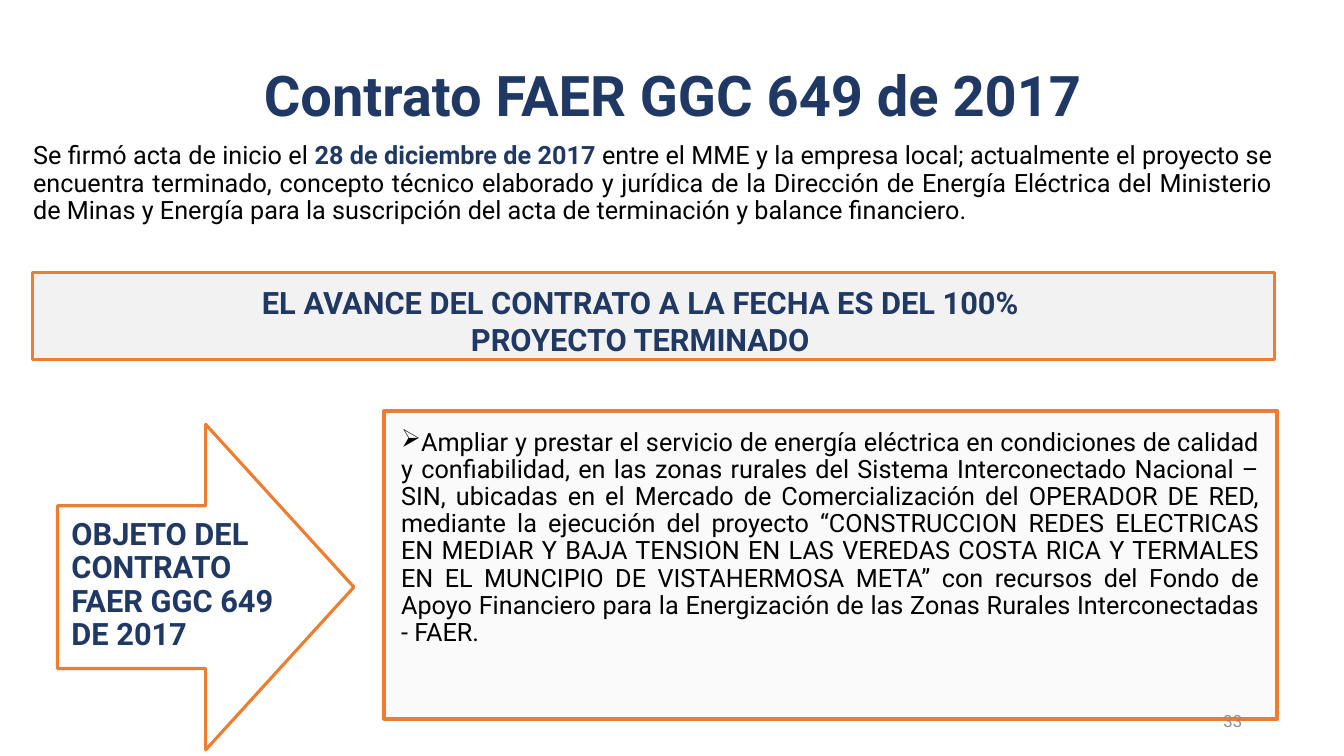
from lxml.etree import SubElement as Sub
from pptx import Presentation
from pptx.dml.color import RGBColor as Rgb
from pptx.enum.shapes import MSO_SHAPE as Geo
from pptx.enum.text import MSO_ANCHOR as Anchor, PP_ALIGN as Align
from pptx.oxml.ns import qn
from pptx.util import Pt

PX = 9144  # 100 px to the inch
HUE = {
    "navy": "203864",
    "orange": "ED7D31",
    "pale": "F2F2F2",
    "black": "000000",
    "gray": "8C8C8C",
}
HEAD = {"size": Pt(22), "bold": True}
BODY = {"size": Pt(18), "bold": False}

START = [
    ("Se firmó acta de inicio el ", "black", BODY),
    ("28 de diciembre de 2017 ", "navy", {**BODY, "bold": True}),
    ("entre el MME y la empresa local; actualmente el proyecto se encuentra "
     "terminado, concepto técnico elaborado y jurídica de la Dirección de "
     "Energía Eléctrica del Ministerio de Minas y Energía para la suscripción "
     "del acta de terminación y balance financiero. ", "black", BODY),
]
STATE = ["EL AVANCE DEL CONTRATO A LA FECHA ES DEL 100%", "PROYECTO TERMINADO"]
GOAL = (
    "Ampliar y prestar el servicio de energía eléctrica en condiciones de "
    "calidad y confiabilidad, en las zonas rurales del Sistema Interconectado "
    "Nacional – SIN, ubicadas en el Mercado de Comercialización del OPERADOR "
    "DE RED, mediante la ejecución del proyecto “CONSTRUCCION REDES ELECTRICAS "
    "EN MEDIAR Y BAJA TENSION EN LAS VEREDAS COSTA RICA Y TERMALES EN EL "
    "MUNCIPIO DE VISTAHERMOSA META” con recursos del Fondo de Apoyo Financiero "
    "para la Energización de las Zonas Rurales Interconectadas - FAER."
)


def place(*box):
    return [n * PX for n in box]


def frame(slide, geo, box, width, fill=None, alpha=None):
    """Outline a shape in orange; alpha is the fill opacity in percent."""
    shape = slide.shapes.add_shape(geo, *place(*box))
    shape.shadow.inherit = False
    shape.line.color.rgb = Rgb.from_string(HUE["orange"])
    shape.line.width = Pt(width)
    if fill is None:
        shape.fill.background()
        return
    shape.fill.solid()
    shape.fill.fore_color.rgb = Rgb.from_string(HUE[fill])
    if alpha is not None:
        tint = shape.fill._xPr.find(qn("a:solidFill"))[0]
        Sub(tint, qn("a:alpha"), val=str(alpha * 1000))


def mark(para, sign):
    """Add a bullet that hangs left of a zero margin."""
    props = para._p.get_or_add_pPr()
    props.set("marL", "0")
    props.set("indent", str(-25 * PX))
    Sub(props, qn("a:buChar"), char=sign)


def write(slide, box, paras, align, anchor=Anchor.TOP, space=1.0, sign=None):
    """Fill a text box; each paragraph is a list of (text, hue, format)."""
    area = slide.shapes.add_textbox(*place(*box)).text_frame
    area.word_wrap = True
    area.vertical_anchor = anchor
    for i, runs in enumerate(paras):
        para = area.add_paragraph() if i else area.paragraphs[0]
        para.alignment = align
        para.line_spacing = space
        if sign:
            mark(para, sign)
        for text, hue, form in runs:
            run = para.add_run()
            run.text = text
            run.font.color.rgb = Rgb.from_string(HUE[hue])
            for key, val in {"name": "Roboto", **form}.items():
                setattr(run.font, key, val)


def main():
    deck = Presentation()
    deck.slide_width, deck.slide_height = place(1333, 750)
    slide = deck.slides.add_slide(deck.slide_layouts[6])

    title = ("Contrato FAER GGC 649 de 2017", "navy", {**HEAD, "size": Pt(40)})
    write(slide, (92, 41, 1150, 92), [[title]], Align.CENTER, Anchor.BOTTOM, 0.9)

    frame(slide, Geo.RECTANGLE, (381, 408, 886, 305), 3, "pale", 38)
    frame(slide, Geo.RECTANGLE, (32, 270, 1232, 87), 2.25, "pale")
    write(slide, (23, 137, 1249, 121), [START], Align.JUSTIFY, space=0.9)
    write(slide, (23, 277, 1224, 87),
          [[(line, "navy", HEAD)] for line in STATE], Align.CENTER)
    write(slide, (388, 421, 871, 299), [[(GOAL, "black", BODY)]],
          Align.JUSTIFY, space=0.9, sign="➢")

    frame(slide, Geo.RIGHT_ARROW, (57, 421, 294, 323), 2.25)
    label = ("OBJETO DEL CONTRATO FAER GGC 649 DE 2017", "navy", HEAD)
    write(slide, (61, 510, 251, 168), [[label]], Align.LEFT, space=0.9)

    write(slide, (942, 695, 300, 40), [[("33", "gray", {"size": Pt(12)})]],
          Align.RIGHT, Anchor.MIDDLE)
    deck.save("out.pptx")


if __name__ == "__main__":
    main()
